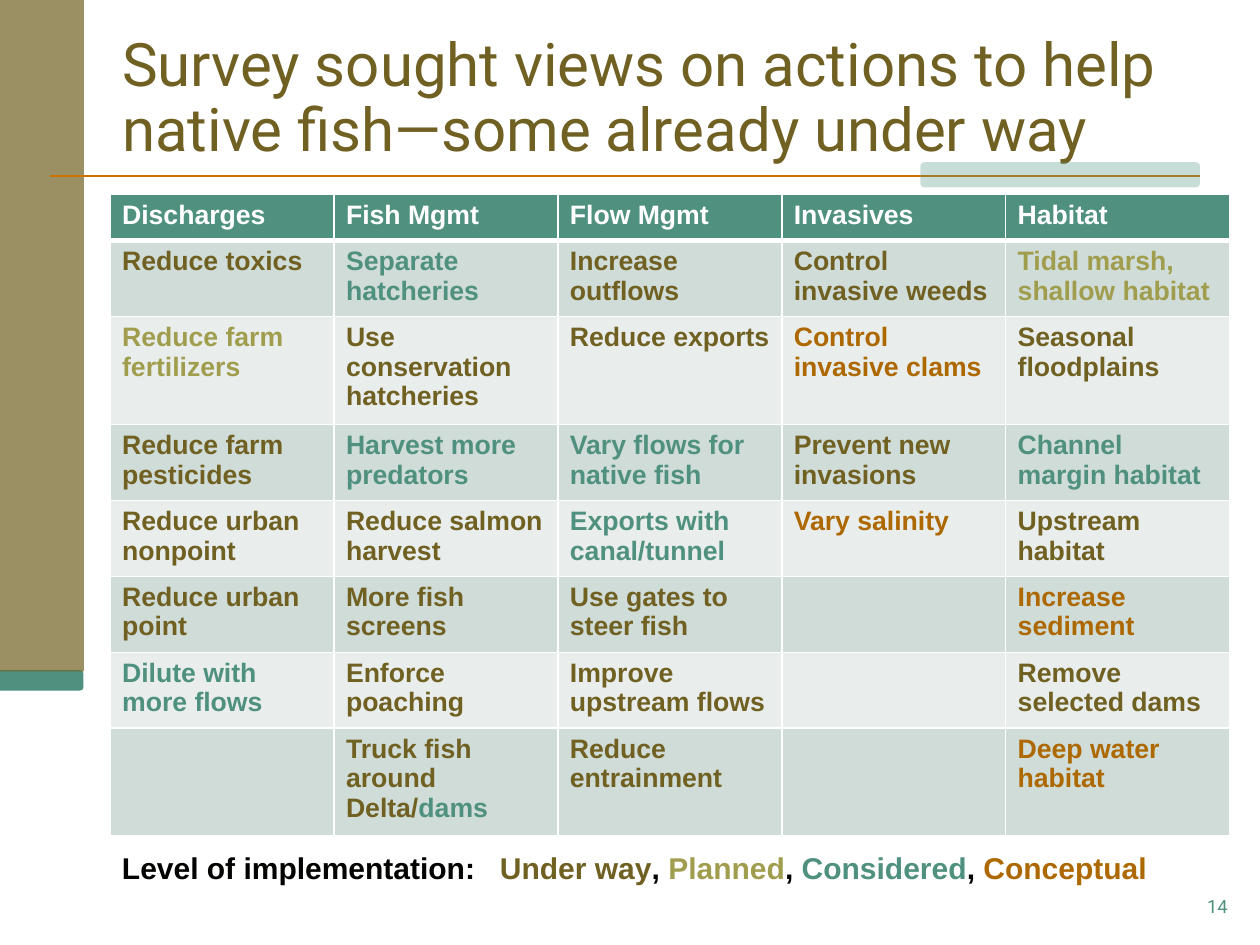
from dataclasses import dataclass

from lxml import etree
from pptx import Presentation
from pptx import util as u
from pptx.dml.color import RGBColor
from pptx.enum import shapes, text
from pptx.oxml.ns import qn


@dataclass(frozen=True)
class Theme:
    under_way: str = "706123"
    planned: str = "A09E4E"
    considered: str = "4F917E"
    conceptual: str = "AD6800"
    rule: str = "CD7100"
    ink: str = "020200"
    white: str = "FFFFFF"
    bands: tuple = ("D0DCD8", "E9EEEC")
    head_font: str = "Roboto"
    body_font: str = "Arial"
    title_pt: int = 36
    legend_pt: int = 18
    cell_pt: int = 16
    number_pt: int = 11


T = Theme()
U, P, C, X = T.under_way, T.planned, T.considered, T.conceptual

# Grid of 0.1 inch modules: 105 columns by 78.75 rows
COLS, ROWS = 105, 78.75
LEFT = 9.18
HEADER_ROW, LINE_ROWS = 3.85, {2: 6.33, 3: 9}

# Each action is a list of (level colour, wording) pieces
ACTIONS = {
    "Discharges": [
        [(U, "Reduce toxics")], [(P, "Reduce farm fertilizers")],
        [(U, "Reduce farm pesticides")], [(U, "Reduce urban nonpoint")],
        [(U, "Reduce urban point")], [(C, "Dilute with more flows")], []],
    "Fish Mgmt": [
        [(C, "Separate hatcheries")], [(U, "Use conservation hatcheries")],
        [(C, "Harvest more predators")], [(U, "Reduce salmon harvest")],
        [(U, "More fish screens")], [(U, "Enforce poaching")],
        [(U, "Truck fish around Delta/"), (C, "dams")]],
    "Flow Mgmt": [
        [(U, "Increase outflows")], [(U, "Reduce exports")],
        [(C, "Vary flows for native fish")], [(C, "Exports with canal/tunnel")],
        [(U, "Use gates to steer fish")], [(U, "Improve upstream flows")],
        [(U, "Reduce entrainment")]],
    "Invasives": [
        [(U, "Control invasive weeds")], [(X, "Control invasive clams")],
        [(U, "Prevent new invasions")], [(X, "Vary salinity")], [], [], []],
    "Habitat": [
        [(P, "Tidal marsh, shallow habitat")], [(U, "Seasonal floodplains")],
        [(C, "Channel margin habitat")], [(U, "Upstream habitat")],
        [(X, "Increase sediment")], [(U, "Remove selected dams")],
        [(X, "Deep water habitat")]],
}
LINES_PER_ROW = [2, 3, 2, 2, 2, 2, 3]


def grid(*modules):
    return [u.Inches(m / 10) for m in modules]


def rgb(color):
    return RGBColor.from_string(color)


def write(p, pieces, **font):
    """Add (colour, wording) runs to a paragraph, all in one font."""
    for color, words in pieces:
        r = p.add_run()
        r.text = words
        r.font.color.rgb = rgb(color)
        for name, value in font.items():
            setattr(r.font, name, value)


def block(s, kind, box, color, alpha=100):
    sp = s.shapes.add_shape(kind, *grid(*box))
    sp.shadow.inherit = False
    sp.fill.solid()
    sp.fill.fore_color.rgb = rgb(color)
    sp.line.fill.background()
    if alpha < 100:
        clr = sp.fill._xPr.find(".//" + qn("a:srgbClr"))
        etree.SubElement(clr, qn("a:alpha")).set("val", str(alpha * 1000))


def textbox(s, box):
    tf = s.shapes.add_textbox(*grid(*box)).text_frame
    tf.word_wrap = True
    return tf.paragraphs[0]


def decoration(s, bar_w, bar_h, rule_y):
    # Side bar with its green foot
    rounded = shapes.MSO_SHAPE.ROUNDED_RECTANGLE
    block(s, rounded, (-0.8, bar_h - 0.1, bar_w + 0.75, 1.7), T.considered)
    block(s, shapes.MSO_SHAPE.RECTANGLE, (0, 0, bar_w, bar_h), T.under_way, 70)
    # Rule under the title and its tinted end
    right = COLS - 5
    cx = s.shapes.add_connector(shapes.MSO_CONNECTOR.STRAIGHT,
                                *grid(4.2, rule_y, right, rule_y))
    cx.line.color.rgb = rgb(T.rule)
    cx.line.width = u.Pt(1.5)
    etree.SubElement(cx._element.spPr, qn("a:effectLst"))
    block(s, rounded, (right - 23.3, rule_y - 1.15, 23.3, 2.1), T.considered, 30)


def title(s, box, words):
    sp = s.shapes.title
    sp.left, sp.top, sp.width, sp.height = grid(*box)
    tf = sp.text_frame
    frame = dict(word_wrap=True, vertical_anchor=text.MSO_ANCHOR.BOTTOM,
                 auto_size=text.MSO_AUTO_SIZE.NONE)
    for name, value in frame.items():
        setattr(tf, name, value)
    p = tf.paragraphs[0]
    p.alignment, p.line_spacing = text.PP_ALIGN.LEFT, 0.9
    write(p, [(T.under_way, words)], name=T.head_font, size=u.Pt(T.title_pt))


def borders(cell, **points):
    """Draw white cell edges; points maps an edge (L, R, T, B) to its width."""
    tc_pr = cell._tc.get_or_add_tcPr()
    for edge, width in points.items():
        ln = etree.SubElement(tc_pr, qn("a:ln" + edge), w=str(u.Pt(width)))
        fill = etree.SubElement(ln, qn("a:solidFill"))
        etree.SubElement(fill, qn("a:srgbClr"), val=T.white)


def actions_table(s, left, top, width):
    heights = [HEADER_ROW] + [LINE_ROWS[n] for n in LINES_PER_ROW]
    tbl = s.shapes.add_table(len(heights), len(ACTIONS),
                             *grid(left, top, width, sum(heights))).table
    for row, height in zip(tbl.rows, heights):
        row.height = grid(height)[0]
    for j, (heading, actions) in enumerate(ACTIONS.items()):
        for i, pieces in enumerate([[(T.white, heading)]] + actions):
            cell = tbl.cell(i, j)
            borders(cell, L=1, R=1, T=3 if i == 1 else 1, B=1 if i else 3)
            cell.fill.solid()
            cell.fill.fore_color.rgb = rgb(T.bands[(i - 1) % 2] if i else T.considered)
            write(cell.text_frame.paragraphs[0], pieces,
                  name=T.body_font, size=u.Pt(T.cell_pt), bold=True)


def legend(s, box, tab):
    p = textbox(s, box)
    tabs = etree.SubElement(p._p.get_or_add_pPr(), qn("a:tabLst"))
    etree.SubElement(tabs, qn("a:tab"), pos=str(grid(tab)[0]), algn="l")
    pieces = [(T.ink, "Level of implementation:\t"), (U, "Under way"), (T.ink, ", "),
              (P, "Planned"), (T.ink, ", "), (C, "Considered"), (T.ink, ", "),
              (X, "Conceptual")]
    write(p, pieces, name=T.body_font, size=u.Pt(T.legend_pt), bold=True)


def slide_number(s, box, number):
    p = textbox(s, box)
    p.alignment = text.PP_ALIGN.RIGHT
    write(p, [(T.considered, number)], name=T.head_font, size=u.Pt(T.number_pt))


def main():
    prs = Presentation()
    prs.slide_width, prs.slide_height = grid(COLS, ROWS)
    s = prs.slides.add_slide(prs.slide_layouts.get_by_name("Title Only"))
    decoration(s, bar_w=7, bar_h=55.95, rule_y=14.67)
    title(s, (LEFT, 2.4, 90.6, 11.8),
          "Survey sought views on actions to help native fish—some already under way")
    actions_table(s, LEFT, 16.2, 93.3)
    legend(s, (LEFT, 70.3, 90.8, 4), tab=31.5)
    slide_number(s, (81.4, 74.1, 21.9, 4), "14")
    prs.save("out.pptx")


if __name__ == "__main__":
    main()
